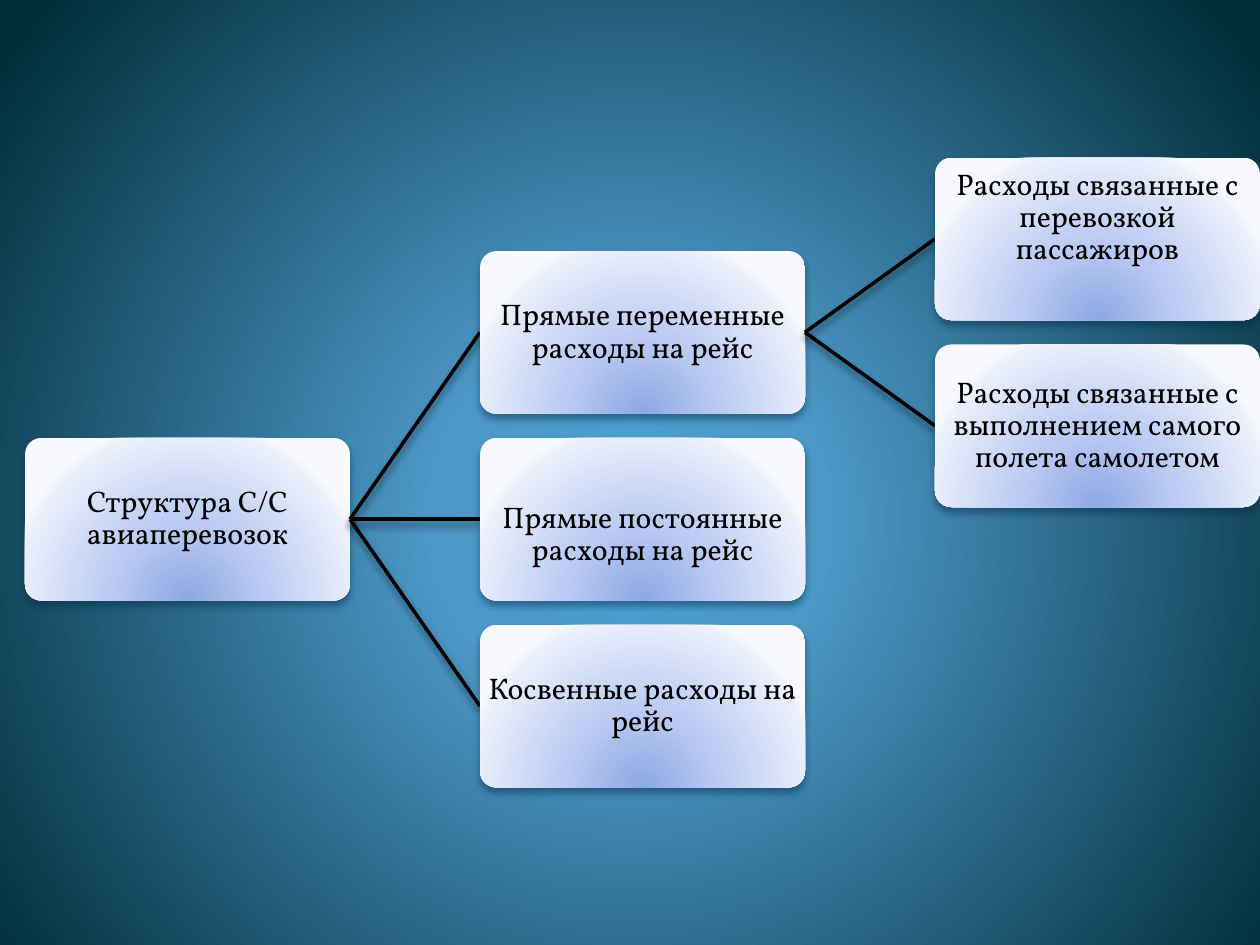
"""Builds a slide with a tree of the cost structure of air transport."""
from dataclasses import dataclass

from lxml.etree import SubElement
from pptx import Presentation
from pptx.dml.color import RGBColor
from pptx.enum.shapes import MSO_CONNECTOR, MSO_SHAPE
from pptx.enum.text import MSO_ANCHOR, PP_ALIGN
from pptx.oxml.ns import qn
from pptx.shapes.autoshape import Shape
from pptx.slide import Slide
from pptx.util import Pt


@dataclass(frozen=True)
class Gradient:
    stops: tuple[tuple[int, str], ...]
    focus: tuple[int, int, int, int]


@dataclass(frozen=True)
class Theme:
    backdrop: Gradient = Gradient(
        ((0, "4AA0D6"), (25, "4C98C7"), (100, "002C38")), (10, 110, 10, 100))
    card: Gradient = Gradient(
        ((0, "8DA8E3"), (43, "BBCBF3"), (93, "EAEFFB"), (100, "F7F9FF")),
        (50, 130, 50, -30))
    ink: str = "000000"
    card_shadow: str = "042747"
    font: str = "Vollkorn"
    text_size: float = 17
    line_width: float = 2


@dataclass(frozen=True)
class Node:
    text: str
    children: tuple["Node", ...] = ()
    space_above: float = 0
    space_below: float = 0


THEME = Theme()
SLIDE_WIDTH, SLIDE_HEIGHT = 720, 540
BOX_WIDTH, BOX_HEIGHT = 185.7, 92.9
COLUMN_STEP, ROW_STEP = 260, 106.8
ROOT_LEFT, ROOT_MIDDLE = 14.3, 296.7
INSET = 0.7

TREE = Node("Структура С/С авиаперевозок", (
    Node("Прямые переменные расходы на рейс", (
        Node("Расходы связанные с перевозкой пассажиров", space_below=24),
        Node("Расходы связанные с выполнением самого полета самолетом"),
    )),
    Node("Прямые постоянные расходы на рейс", space_above=18),
    Node("Косвенные расходы на рейс"),
))


def apply_gradient(owner: Slide | Shape, gradient: Gradient) -> None:
    fill = owner.background.fill if isinstance(owner, Slide) else owner.fill
    fill.gradient()
    element = next(owner.element.iter(qn("a:gradFill")))
    element.clear()
    stop_list = SubElement(element, qn("a:gsLst"))
    for position, color in gradient.stops:
        stop = SubElement(stop_list, qn("a:gs"), pos=str(position * 1000))
        SubElement(stop, qn("a:srgbClr"), val=color)
    circle = SubElement(element, qn("a:path"), {"path": "circle"})
    sides = {side: str(value * 1000) for side, value in zip("ltrb", gradient.focus)}
    SubElement(circle, qn("a:fillToRect"), sides)


def add_shadow(properties, color: str) -> None:
    effects = properties.find(qn("a:effectLst"))
    if effects is None:
        effects = SubElement(properties, qn("a:effectLst"))
    shadow = SubElement(effects, qn("a:outerShdw"), {
        "blurRad": str(Pt(4.5)), "dist": str(Pt(3)),
        "dir": str(90 * 60000), "rotWithShape": "0"})
    tint = SubElement(shadow, qn("a:srgbClr"), val=color)
    SubElement(tint, qn("a:alpha"), val="48000")


def set_format(target: object, values: dict[str, object]) -> None:
    for name, value in values.items():
        setattr(target, name, value)


def write_text(box: Shape, node: Node) -> None:
    frame = box.text_frame
    set_format(frame, {
        "word_wrap": True, "vertical_anchor": MSO_ANCHOR.MIDDLE,
        "margin_left": Pt(INSET), "margin_right": Pt(INSET),
        "margin_top": Pt(INSET + node.space_above),
        "margin_bottom": Pt(INSET + node.space_below)})
    para = frame.paragraphs[0]
    set_format(para, {"alignment": PP_ALIGN.CENTER, "line_spacing": 0.9})
    span = para.add_run()
    span.text = node.text
    set_format(span.font, {"name": THEME.font, "size": Pt(THEME.text_size)})
    span.font.color.rgb = RGBColor.from_string(THEME.ink)


def draw_box(page: Slide, node: Node, left: float, middle: float) -> None:
    box = page.shapes.add_shape(
        MSO_SHAPE.ROUNDED_RECTANGLE, Pt(left), Pt(middle - BOX_HEIGHT / 2),
        Pt(BOX_WIDTH), Pt(BOX_HEIGHT))
    box.adjustments[0] = 0.1
    apply_gradient(box, THEME.card)
    box.line.fill.background()
    box.shadow.inherit = False
    add_shadow(box.element.spPr, THEME.card_shadow)
    write_text(box, node)


def draw_branch(page: Slide, start: tuple[float, float], end: tuple[float, float]) -> None:
    branch = page.shapes.add_connector(
        MSO_CONNECTOR.STRAIGHT, *(Pt(value) for value in start + end))
    branch.line.color.rgb = RGBColor.from_string(THEME.ink)
    branch.line.width = Pt(THEME.line_width)
    add_shadow(branch.element.spPr, THEME.ink)


def draw_tree(page: Slide, node: Node, left: float, middle: float) -> None:
    draw_box(page, node, left, middle)
    child_left = left + COLUMN_STEP
    for index, child in enumerate(node.children):
        offset = index - (len(node.children) - 1) / 2
        child_middle = middle + offset * ROW_STEP
        draw_branch(page, (left + BOX_WIDTH, middle), (child_left, child_middle))
        draw_tree(page, child, child_left, child_middle)


def main() -> None:
    deck = Presentation()
    set_format(deck, {"slide_width": Pt(SLIDE_WIDTH), "slide_height": Pt(SLIDE_HEIGHT)})
    page = deck.slides.add_slide(deck.slide_layouts[6])
    apply_gradient(page, THEME.backdrop)
    draw_tree(page, TREE, ROOT_LEFT, ROOT_MIDDLE)
    deck.save("out.pptx")


if __name__ == "__main__":
    main()
